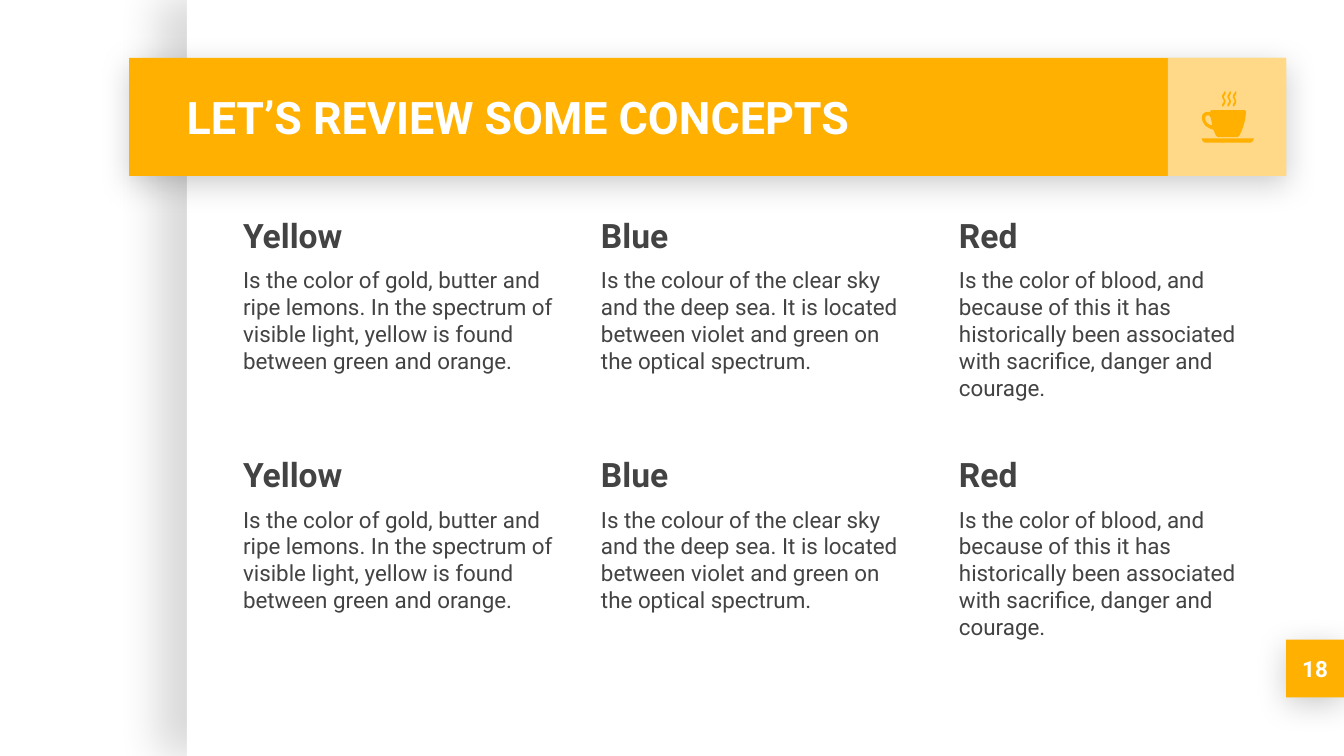
import pptx
import pptx.dml.color
import pptx.enum.shapes
import pptx.enum.text
import pptx.oxml
import pptx.oxml.ns
import pptx.util
from lxml import etree

Inches = pptx.util.Inches
Pt = pptx.util.Pt
Anchor = pptx.enum.text.MSO_ANCHOR
Align = pptx.enum.text.PP_ALIGN

SLIDE_WIDTH = 10
SLIDE_HEIGHT = SLIDE_WIDTH * 9 / 16
COLORS = {"white": "FFFFFF", "amber": "FFB000", "text": "434343", "shadow": "000000"}
FONT = "Roboto"

CONCEPTS = [
    ("Yellow", "Is the color of gold, butter and ripe lemons. In the spectrum of "
               "visible light, yellow is found between green and orange."),
    ("Blue", "Is the colour of the clear sky and the deep sea. It is located "
             "between violet and green on the optical spectrum."),
    ("Red", "Is the color of blood, and because of this it has historically been "
            "associated with sacrifice, danger and courage."),
]

CUP = [(70, 140), (64, 156), (45, 152), (25, 157), (8, 172), (2, 195), (8, 225),
       (28, 255), (58, 275), (88, 285), (108, 330), (122, 340), (270, 340),
       (285, 325), (308, 270), (325, 210), (332, 150), (320, 140)]
HANDLE_HOLE = [(50, 178), (62, 183), (70, 200), (80, 252), (62, 250), (40, 235),
               (28, 210), (28, 190), (38, 179)]
SAUCER = [(0, 350), (8, 370), (25, 382), (365, 382), (382, 370), (390, 350)]
STEAM = [(20, 0), (17, 10), (4, 28), (2, 44), (14, 66), (16, 77), (4, 95), (2, 107),
         (8, 113), (14, 108), (27, 87), (29, 70), (17, 47), (17, 36), (29, 16),
         (30, 4), (25, 0)]


def rgb(name):
    return pptx.dml.color.RGBColor.from_string(COLORS[name])


def set_fill(shape, color):
    shape.shadow.inherit = False
    shape.fill.solid()
    shape.fill.fore_color.rgb = rgb(color)
    shape.line.fill.background()


def add_rectangle(slide, box, color):
    shape = slide.shapes.add_shape(
        pptx.enum.shapes.MSO_SHAPE.RECTANGLE, *map(Inches, box))
    set_fill(shape, color)
    return shape


def add_shadow(shape, opacity, blur, distance, angle):
    effects = shape.element.spPr.find(pptx.oxml.ns.qn("a:effectLst"))
    effects.append(pptx.oxml.parse_xml(
        f'<a:outerShdw {pptx.oxml.ns.nsdecls("a")} blurRad="{Pt(blur)}" '
        f'dist="{Pt(distance)}" dir="{angle * 60000}" algn="bl" rotWithShape="0">'
        f'<a:srgbClr val="{COLORS["shadow"]}"><a:alpha val="{opacity * 1000}"/>'
        f'</a:srgbClr></a:outerShdw>'))


def set_opacity(shape, opacity):
    color = shape.element.spPr.find(".//" + pptx.oxml.ns.qn("a:srgbClr"))
    alpha = etree.SubElement(color, pptx.oxml.ns.qn("a:alpha"))
    alpha.set("val", str(opacity * 1000))


def add_text(slide, box, lines, color, anchor=Anchor.TOP, align=Align.LEFT):
    frame = slide.shapes.add_textbox(*map(Inches, box)).text_frame
    frame.word_wrap = True
    frame.vertical_anchor = anchor
    frame.margin_left = frame.margin_right = Inches(0.1)
    frame.margin_top = frame.margin_bottom = Inches(0.1)
    for index, (text, size, bold) in enumerate(lines):
        paragraph = frame.add_paragraph() if index else frame.paragraphs[0]
        paragraph.alignment = align
        paragraph.space_before = Pt(6 if index else 0)
        run = paragraph.add_run()
        run.text = text
        run.font.name = FONT
        run.font.size = Pt(size)
        run.font.bold = bold
        run.font.color.rgb = rgb(color)


def add_outline(slide, left, top, contours):
    builder = slide.shapes.build_freeform(*contours[0][0], scale=914.4)
    builder.add_line_segments(contours[0][1:], close=True)
    for contour in contours[1:]:
        builder.move_to(*contour[0])
        builder.add_line_segments(contour[1:], close=True)
    set_fill(builder.convert_to_shape(Inches(left), Inches(top)), "amber")


def add_cup_icon(slide, left, top):
    add_outline(slide, left, top, [CUP, HANDLE_HOLE])
    add_outline(slide, left, top, [SAUCER])
    for index in range(3):
        add_outline(slide, left + 0.15 + index * 0.04, top, [STEAM])


def add_panel(slide, box):
    add_shadow(add_rectangle(slide, box, "white"), 15, 22.5, 15, 180)


def add_header(slide, box, title):
    left, top, width, height = box
    add_shadow(add_rectangle(slide, box, "amber"), 20, 16.9, 3.8, 90)
    tile_left = left + width - height
    set_opacity(add_rectangle(slide, (tile_left, top, height, height), "white"), 53)
    add_text(slide, (left + 0.33, top, 7.37, height), [(title, 24, True)],
             "white", Anchor.MIDDLE)
    add_cup_icon(slide, tile_left + 0.25, top + 0.25)


def add_concepts(slide, box, rows=2, column_gap=0.13, row_gap=0.11):
    left, top, width, height = box
    columns = len(CONCEPTS)
    cell_width = (width - column_gap * (columns - 1)) / columns
    cell_height = (height - row_gap * (rows - 1)) / rows
    for row in range(rows):
        for column, (name, description) in enumerate(CONCEPTS):
            cell = (left + column * (cell_width + column_gap),
                    top + row * (cell_height + row_gap), cell_width, cell_height)
            add_text(slide, cell, [(name, 18, True), (description, 12, False)], "text")


def add_page_number(slide, box, number):
    add_shadow(add_rectangle(slide, box, "amber"), 20, 16.9, 3.8, 90)
    add_text(slide, box, [(number, 12, True)], "white", Anchor.MIDDLE, Align.CENTER)


def main():
    presentation = pptx.Presentation()
    presentation.slide_width = Inches(SLIDE_WIDTH)
    presentation.slide_height = Inches(SLIDE_HEIGHT)
    slide = presentation.slides.add_slide(presentation.slide_layouts[6])
    add_panel(slide, (1.39, 0, SLIDE_WIDTH - 1.39, SLIDE_HEIGHT))
    add_page_number(slide, (9.57, 4.76, 0.43, 0.43), "18")
    add_header(slide, (0.96, 0.43, 8.61, 0.88), "LET’S REVIEW SOME CONCEPTS")
    add_concepts(slide, (1.71, 1.5, 7.86, 3.45))
    presentation.save("out.pptx")


if __name__ == "__main__":
    main()
